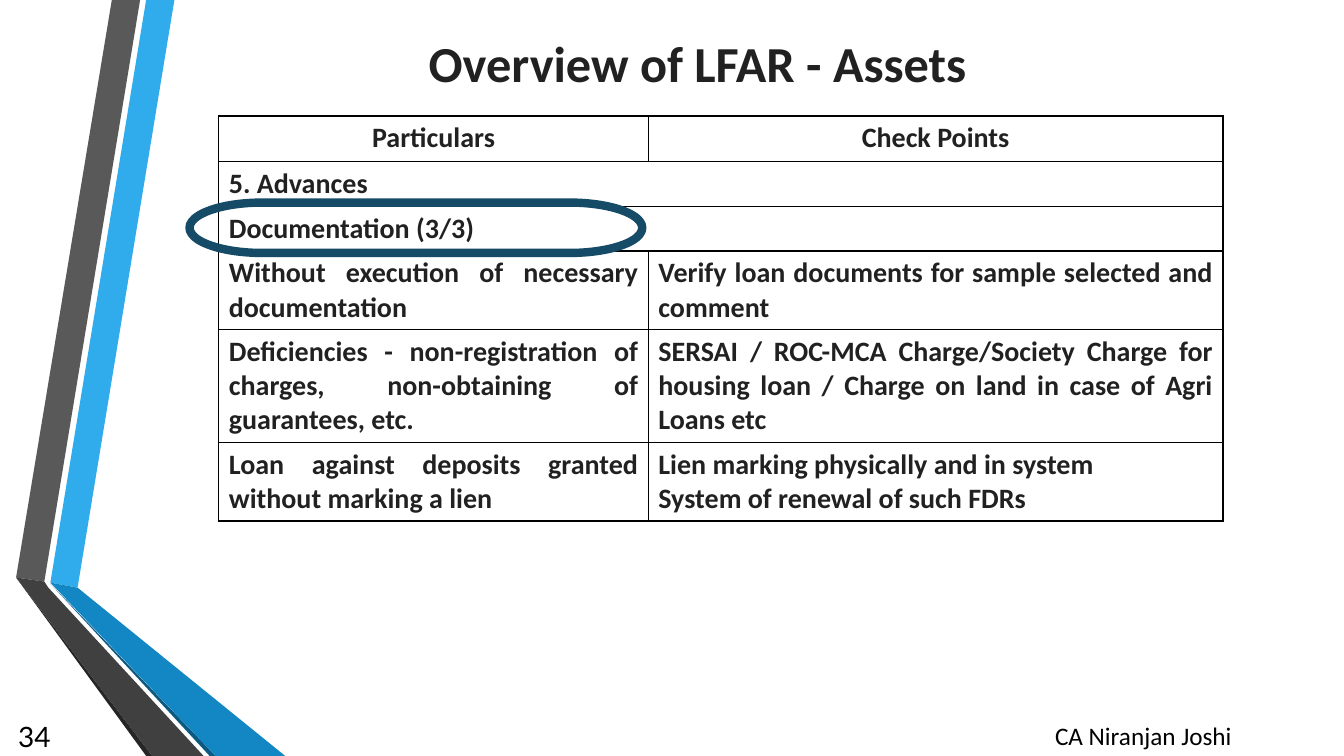
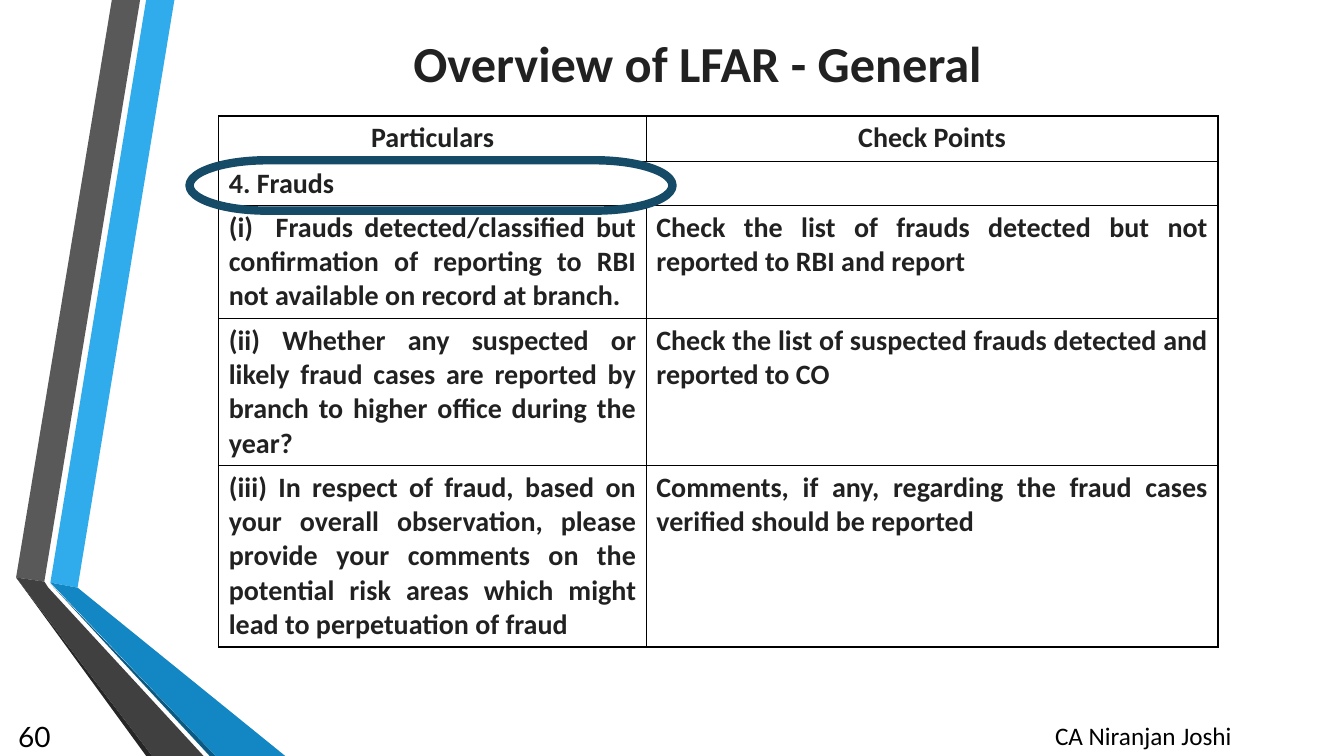
from lxml import etree
from pptx import Presentation
from pptx.dml.color import RGBColor
from pptx.enum import shapes, text
from pptx.oxml import ns
from pptx.util import Inches, Pt

INK = RGBColor(0x21, 0x21, 0x21)
BLACK = RGBColor(0, 0, 0)
RING = RGBColor(0x15, 0x4B, 0x67)
LIGHT_BLUE = RGBColor(0x30, 0xAC, 0xEC)
BLUE = RGBColor(0x12, 0x87, 0xC3)
DARK_BLUE = RGBColor(0x0C, 0x5A, 0x82)
LIGHT_GREY = RGBColor(0x59, 0x59, 0x59)
GREY = RGBColor(0x40, 0x40, 0x40)
DARK_GREY = RGBColor(0x26, 0x26, 0x26)

LEFT, CENTER, RIGHT, JUSTIFY = (
    text.PP_ALIGN.LEFT, text.PP_ALIGN.CENTER, text.PP_ALIGN.RIGHT, text.PP_ALIGN.JUSTIFY)
TOP, MIDDLE = text.MSO_ANCHOR.TOP, text.MSO_ANCHOR.MIDDLE

BANDS = [
    (LIGHT_BLUE, [(0.5, 5.78), (0.77, 5.83), (1.73, 0), (1.45, 0)]),
    (LIGHT_GREY, [(1.39, 0), (1.11, 0), (0.16, 5.73), (0.44, 5.77)]),
    (DARK_GREY, [(0.16, 5.73), (1.45, 7.5), (1.51, 7.5)]),
    (DARK_BLUE, [(0.5, 5.79), (2.08, 7.5), (2.14, 7.5)]),
    (BLUE, [(0.5, 5.78), (2.14, 7.5), (2.83, 7.5), (0.77, 5.83)]),
    (GREY, [(2.02, 7.5), (0.48, 5.83), (0.44, 5.77), (0.16, 5.73), (1.51, 7.5)]),
]

HEADINGS = ("Particulars", "Check Points")

# A row with one text spans both columns.
SLIDES = [
    {
        "title": "Overview of LFAR - Assets",
        "number": "34",
        "columns": (4.26, 5.7),
        "heights": (0.45, 0.45, 0.44, 0.78, 1.12, 0.78),
        "ring": (2.01, 4.49),
        "rows": [
            HEADINGS,
            ("5. Advances",),
            ("Documentation (3/3)",),
            ("Without execution of necessary documentation",
             "Verify loan documents for sample selected and comment"),
            ("Deficiencies - non-registration of charges, non-obtaining of guarantees, etc.",
             "SERSAI / ROC-MCA Charge/Society Charge for housing loan / "
             "Charge on land in case of Agri Loans etc"),
            ("Loan against deposits granted without marking a lien",
             "Lien marking physically and in system\nSystem of renewal of such FDRs"),
        ],
    },
    {
        "title": "Overview of LFAR - General",
        "number": "60",
        "columns": (4.24, 5.67),
        "heights": (0.45, 0.44, 1.12, 1.46, 1.8),
        "ring": (1.59, 4.79),
        "rows": [
            HEADINGS,
            ("4. Frauds",),
            ("(i)  Frauds detected/classified but confirmation of reporting to RBI "
             "not available on record at branch.",
             "Check the list of frauds detected but not reported to RBI and report"),
            ("(ii) Whether any suspected or likely fraud cases are reported by branch "
             "to higher office during the year?",
             "Check the list of suspected frauds detected and reported to CO"),
            ("(iii) In respect of fraud, based on your overall observation, please provide "
             "your comments on the potential risk areas which might lead to perpetuation of fraud",
             "Comments, if any, regarding the fraud cases verified should be reported"),
        ],
    },
]


def write(text_frame, words, size, align, color=INK, bold=True, font="Calibri"):
    text_frame.word_wrap = True
    text_frame.text = words
    for paragraph in text_frame.paragraphs:
        paragraph.alignment = align
        for run in paragraph.runs:
            run.font.name = font
            run.font.size = Pt(size)
            run.font.bold = bold
            run.font.color.rgb = color


def add_border(cell):
    """Draw a 1 pt black line on all four sides of a table cell."""
    properties = cell._tc.get_or_add_tcPr()
    for side in ("a:lnL", "a:lnR", "a:lnT", "a:lnB"):
        line = etree.SubElement(properties, ns.qn(side), w=str(Pt(1)))
        fill = etree.SubElement(line, ns.qn("a:solidFill"))
        etree.SubElement(fill, ns.qn("a:srgbClr"), val=str(BLACK))


presentation = Presentation()
presentation.slide_width = Inches(13.33)
presentation.slide_height = Inches(7.5)
blank_layout = presentation.slide_layouts[6]

for content in SLIDES:
    slide = presentation.slides.add_slide(blank_layout)

    for color, outline in BANDS:
        points = [(Inches(x), Inches(y)) for x, y in outline]
        builder = slide.shapes.build_freeform(*points[0])
        builder.add_line_segments(points[1:])
        band = builder.convert_to_shape()
        band.shadow.inherit = False
        band.fill.solid()
        band.fill.fore_color.rgb = color
        band.line.fill.background()

    title = slide.shapes.add_textbox(Inches(2.42), Inches(0.25), Inches(9), Inches(0.74))
    title.text_frame.vertical_anchor = MIDDLE
    write(title.text_frame, content["title"], 36, CENTER)

    rows, columns, heights = content["rows"], content["columns"], content["heights"]
    table = slide.shapes.add_table(
        len(rows), len(columns), Inches(2.17), Inches(1.15),
        Inches(sum(columns)), Inches(sum(heights))).table
    table.first_row = table.horz_banding = False
    for column, width in zip(table.columns, columns):
        column.width = Inches(width)
    for row, height in zip(table.rows, heights):
        row.height = Inches(height)
    for cell in table.iter_cells():
        add_border(cell)
        cell.fill.background()
    for row_index, row_texts in enumerate(rows):
        if len(row_texts) == 1:
            table.cell(row_index, 0).merge(table.cell(row_index, 1))
        align = CENTER if row_index == 0 else JUSTIFY
        for column_index, words in enumerate(row_texts):
            write(table.cell(row_index, column_index).text_frame, words, 20, align)

    author = slide.shapes.add_textbox(Inches(9.59), Inches(7.1), Inches(3.5), Inches(0.4))
    author.text_frame.vertical_anchor = TOP
    write(author.text_frame, "CA Niranjan Joshi", 18, CENTER, BLACK, False)

    number = slide.shapes.add_textbox(Inches(0), Inches(7.1), Inches(0.6), Inches(0.4))
    number.text_frame.vertical_anchor = MIDDLE
    write(number.text_frame, content["number"], 20, RIGHT, BLACK, False, "Lato")

    ring_top, ring_width = content["ring"]
    ring = slide.shapes.add_shape(
        shapes.MSO_SHAPE.FLOWCHART_TERMINATOR,
        Inches(1.88), Inches(ring_top), Inches(ring_width), Inches(0.5))
    ring.shadow.inherit = False
    ring.fill.background()
    ring.line.color.rgb = RING
    ring.line.width = Pt(6)

presentation.save("out.pptx")
